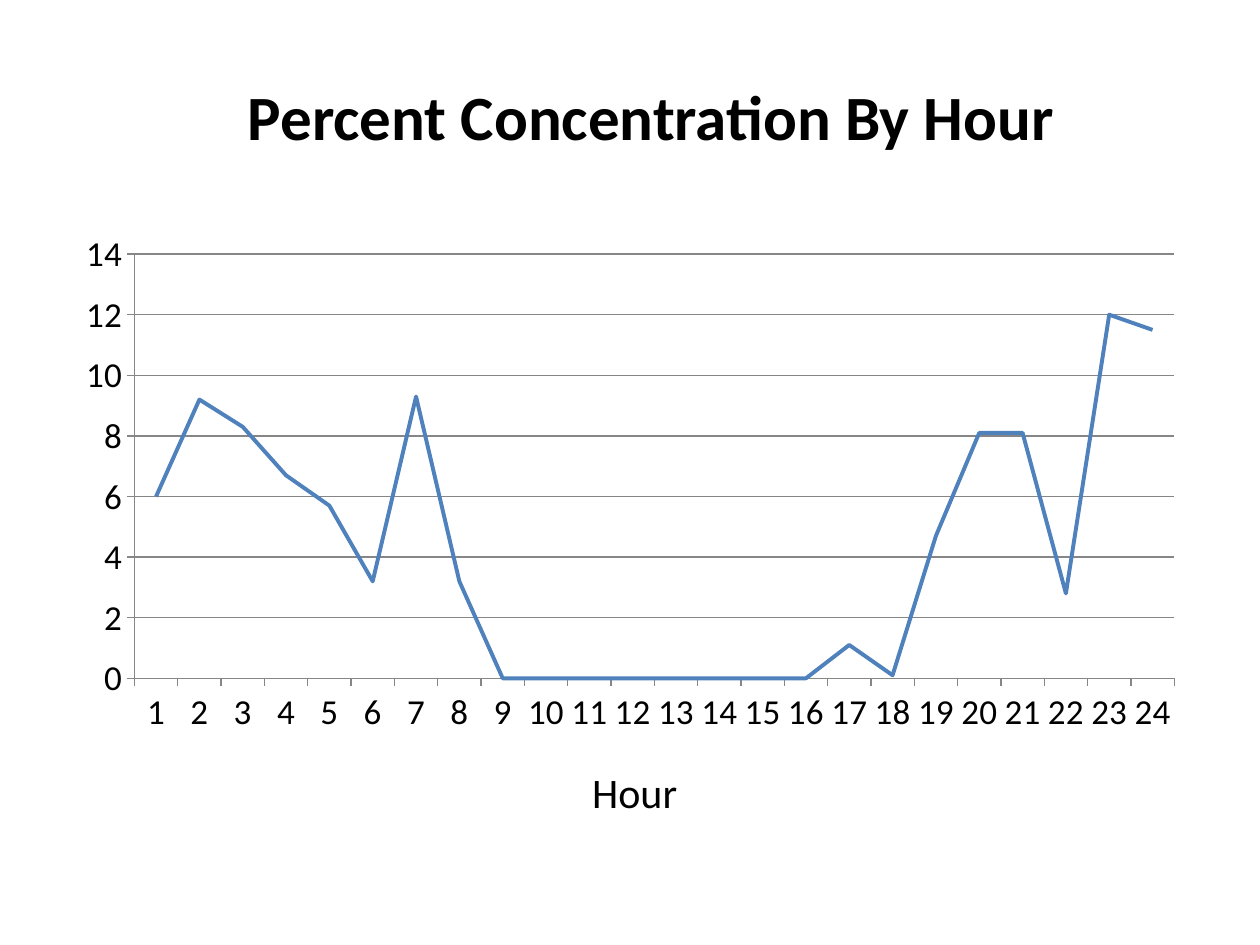
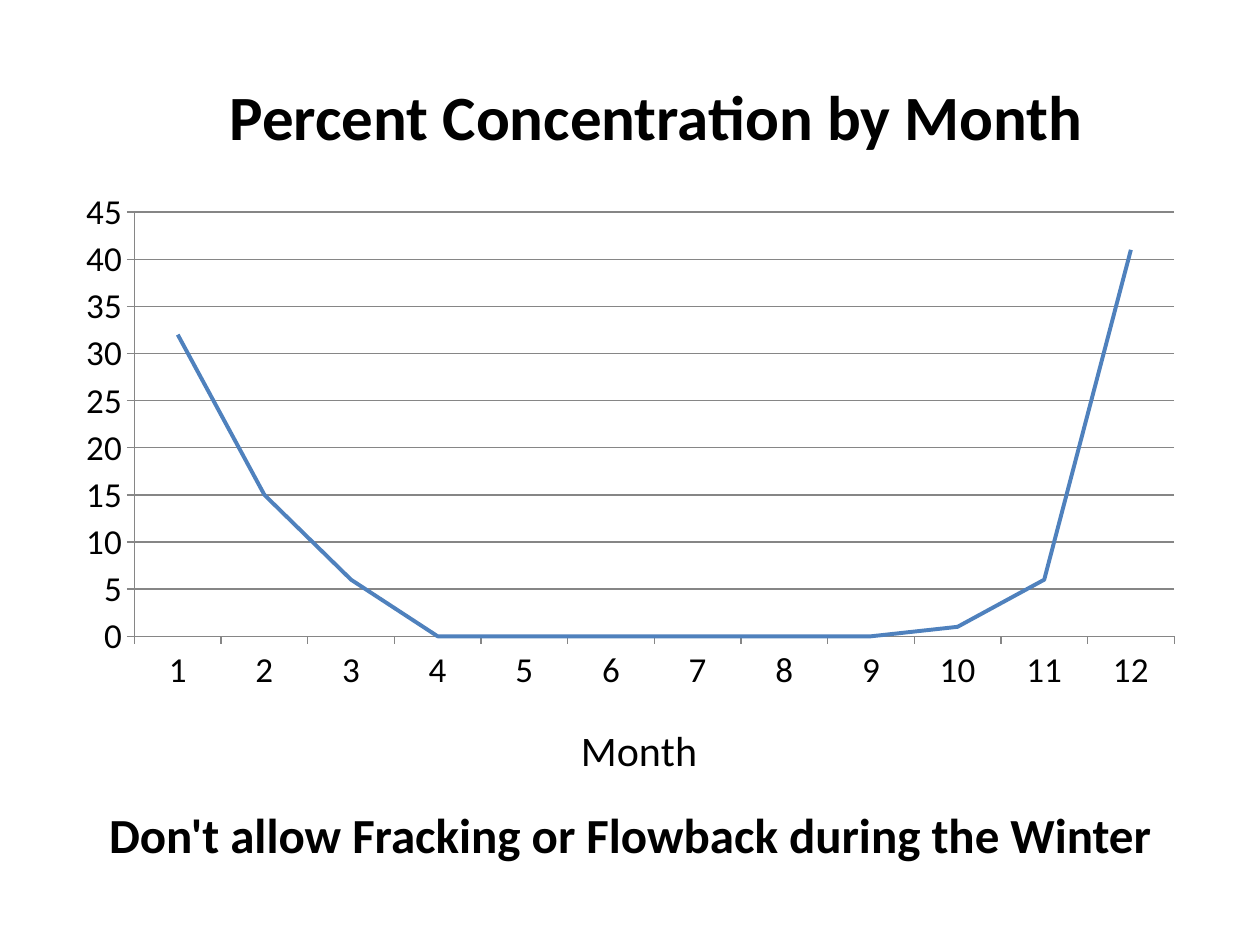
from dataclasses import dataclass

from lxml import etree
from pptx import Presentation
from pptx.chart.data import CategoryChartData
from pptx.dml.color import RGBColor
from pptx.enum.chart import XL_CHART_TYPE, XL_TICK_MARK
from pptx.enum.text import MSO_ANCHOR, PP_ALIGN
from pptx.oxml.ns import qn
from pptx.util import Pt

LINE_CHART = XL_CHART_TYPE.LINE
TICK_OUTSIDE, TICK_NONE = XL_TICK_MARK.OUTSIDE, XL_TICK_MARK.NONE
CENTER, MIDDLE = PP_ALIGN.CENTER, MSO_ANCHOR.MIDDLE

SLIDES = [
    {
        "title": "Percent Concentration By Hour",
        "title_box": (72, 30, 600, 72),
        "chart_top": 126,
        "axis": "Hour",
        "axis_left": 0.46,
        "axis_max": 14,
        "axis_step": 2,
        "values": [6, 9.2, 8.3, 6.7, 5.7, 3.2, 9.3, 3.2, 0, 0, 0, 0,
                   0, 0, 0, 0, 1.1, 0.1, 4.7, 8.1, 8.1, 2.8, 12, 11.5],
    },
    {
        "title": "Percent Concentration by Month",
        "title_box": (78, 30, 594, 72),
        "chart_top": 102,
        "axis": "Month",
        "axis_left": 0.45,
        "axis_max": 45,
        "axis_step": 5,
        "values": [32, 15, 6, 0, 0, 0, 0, 0, 0, 1, 6, 41],
        "advice": "Don't allow Fracking or Flowback during the Winter",
    },
]
SLIDE_SIZE = (720, 540)
CHART_LEFT, CHART_WIDTH, CHART_HEIGHT = 36, 648, 356.5
ADVICE_BOX = (18, 456, 684, 41)
PLOT_LAYOUT = {"x": 0.063, "y": 0.054, "w": 0.917, "h": 0.68}
AXIS_TITLE_TOP = 0.86


@dataclass(frozen=True)
class Theme:
    font: str = "Calibri"
    ink: RGBColor = RGBColor(0, 0, 0)
    curve: RGBColor = RGBColor(0x4F, 0x81, 0xBD)
    grid: RGBColor = RGBColor(0x86, 0x86, 0x86)
    title: int = 36
    advice: int = 28
    axis_title: int = 24
    tick: int = 20
    curve_width: float = 2.25
    grid_width: float = 0.75


THEME = Theme()


def style_font(font, size, bold=False):
    font.name, font.size, font.bold = THEME.font, Pt(size), bold
    font.color.rgb = THEME.ink


def write(frame, text, size, bold=False, anchor=None):
    frame.word_wrap = True
    if anchor is not None:
        frame.vertical_anchor = anchor
    paragraph = frame.paragraphs[0]
    paragraph.alignment = CENTER
    run = paragraph.add_run()
    run.text = text
    style_font(run.font, size, bold)


def style_line(line, color, width):
    line.color.rgb, line.width = color, Pt(width)


def set_layout(parent, index, inner=False, **fractions):
    for existing in parent.findall(qn("c:layout")):
        parent.remove(existing)
    layout = etree.Element(qn("c:layout"))
    manual = etree.SubElement(layout, qn("c:manualLayout"))
    settings = {"layoutTarget": "inner"} if inner else {}
    settings.update(xMode="edge", yMode="edge", **fractions)
    for tag, value in settings.items():
        etree.SubElement(manual, qn(f"c:{tag}")).set("val", str(value))
    parent.insert(index, layout)


def add_concentration_chart(slide, content):
    data = CategoryChartData()
    data.categories = [str(n) for n in range(1, len(content["values"]) + 1)]
    data.add_series("Series 1", content["values"])
    box = map(Pt, (CHART_LEFT, content["chart_top"], CHART_WIDTH, CHART_HEIGHT))
    chart = slide.shapes.add_chart(LINE_CHART, *box, data).chart
    chart.has_legend = chart.has_title = False
    style_font(chart.font, 10)

    plot = chart.plots[0]
    plot.vary_by_categories = False
    concentration = plot.series[0]
    concentration.smooth = False
    style_line(concentration.format.line, THEME.curve, THEME.curve_width)

    periods, percents = chart.category_axis, chart.value_axis
    for axis in (periods, percents):
        axis.major_tick_mark, axis.minor_tick_mark = TICK_OUTSIDE, TICK_NONE
        style_font(axis.tick_labels.font, THEME.tick)
        style_line(axis.format.line, THEME.grid, THEME.grid_width)
    percents.minimum_scale, percents.maximum_scale = 0, content["axis_max"]
    percents.major_unit = content["axis_step"]
    percents.has_major_gridlines = True
    style_line(percents.major_gridlines.format.line, THEME.grid, THEME.grid_width)

    caption = periods.axis_title
    caption.text_frame.text = content["axis"]
    style_font(caption.text_frame.paragraphs[0].runs[0].font, THEME.axis_title)
    set_layout(caption._element, 1, x=content["axis_left"], y=AXIS_TITLE_TOP)
    plot_area = chart._chartSpace.find(".//" + qn("c:plotArea"))
    set_layout(plot_area, 0, inner=True, **PLOT_LAYOUT)


def build_slide(deck, content):
    slide = deck.slides.add_slide(deck.slide_layouts[5])
    title = slide.shapes.title
    title.left, title.top, title.width, title.height = map(Pt, content["title_box"])
    write(title.text_frame, content["title"], THEME.title, bold=True, anchor=MIDDLE)
    add_concentration_chart(slide, content)
    if "advice" in content:
        advice = slide.shapes.add_textbox(*map(Pt, ADVICE_BOX))
        write(advice.text_frame, content["advice"], THEME.advice, bold=True)


def main():
    deck = Presentation()
    deck.slide_width, deck.slide_height = map(Pt, SLIDE_SIZE)
    for content in SLIDES:
        build_slide(deck, content)
    deck.save("out.pptx")


if __name__ == "__main__":
    main()
